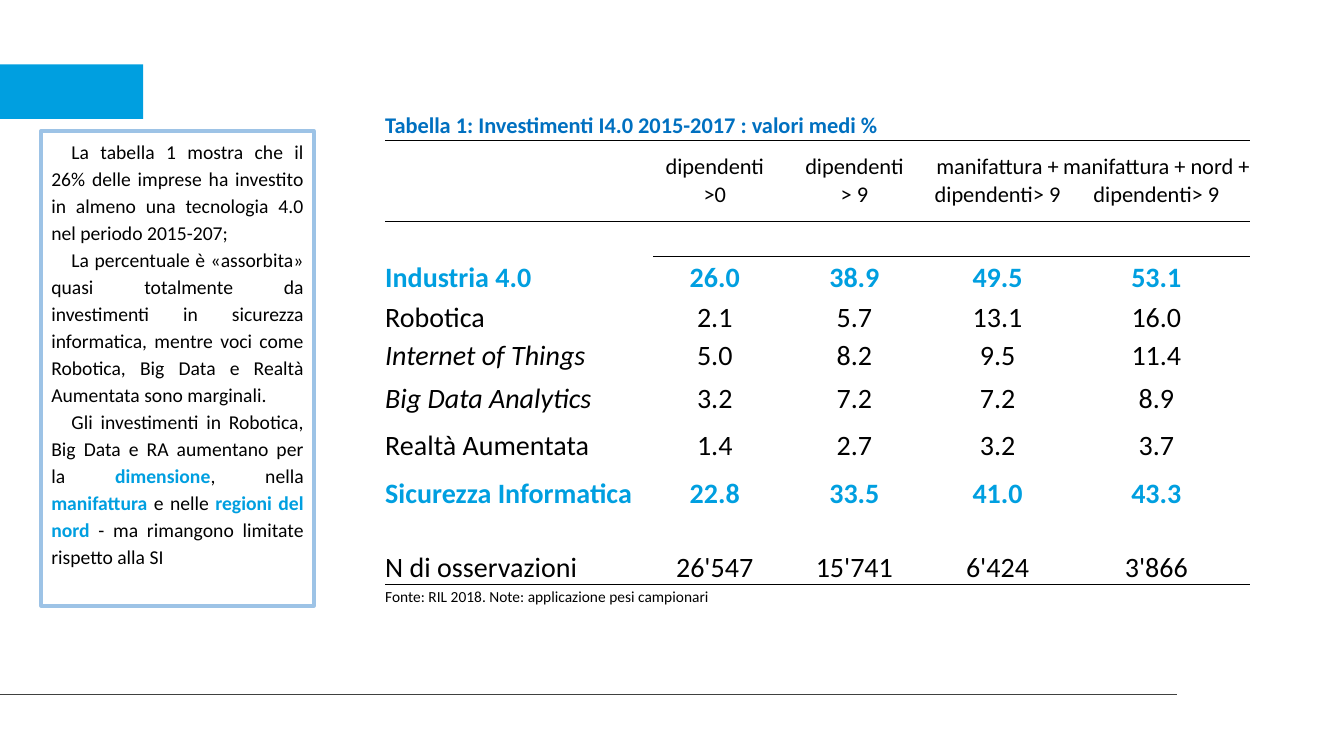
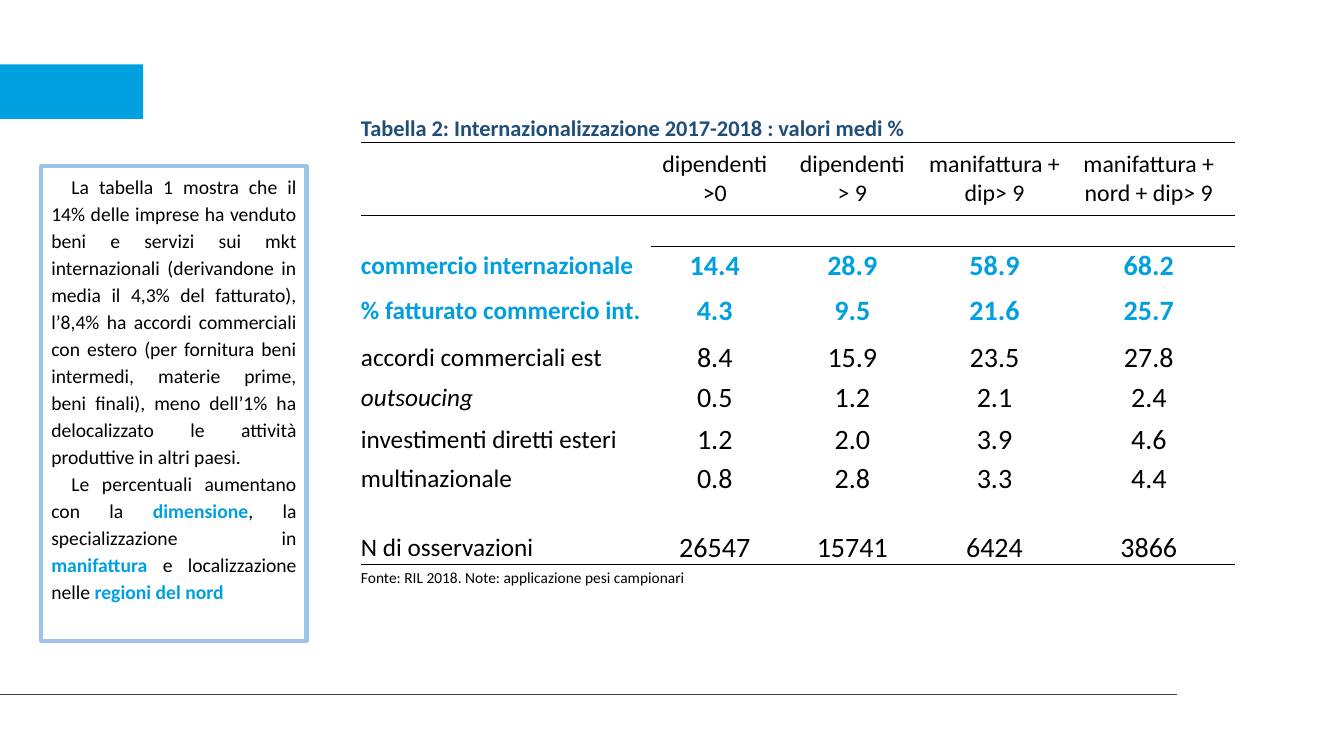
import pptx
import pptx.util
import pptx.dml.color
import pptx.enum.shapes
import pptx.enum.text
import pptx.oxml.ns
from dataclasses import dataclass
from lxml import etree

Align = pptx.enum.text.PP_ALIGN
Anchor = pptx.enum.text.MSO_ANCHOR
qn = pptx.oxml.ns.qn
NO_GRID = "{2D5ABB26-0587-4C30-8999-92F81FD0307C}"


@dataclass(frozen=True)
class Theme:
    font: str = "Calibri"
    accent: str = "009FE0"
    frame: str = "9DC3E6"
    rule: str = "404140"
    ink: str = "000000"
    note: float = 14
    title: float = 16
    value: float = 20
    source: float = 11


THEME = Theme()


def color(code):
    return pptx.dml.color.RGBColor.from_string(code)


def write(para, text, size=THEME.value, tint=THEME.ink, bold=False,
          slant=False, align=Align.LEFT):
    """Add text to a paragraph; parts between asterisks are accented."""
    para.alignment = align
    for i, part in enumerate(text.split("*")):
        if not part:
            continue
        hot = i % 2 == 1
        run = para.add_run()
        run.text = part
        font = run.font
        font.name, font.size = THEME.font, pptx.util.Pt(size)
        font.bold, font.italic = bold or hot, slant
        font.color.rgb = color(THEME.accent if hot else tint)


def edge(cell, *sides):
    """Draw thin lines on the given sides (T before B) of a cell."""
    props = cell._tc.get_or_add_tcPr()
    for side in sides:
        line = etree.SubElement(props, qn(f"a:ln{side}"),
                                w=str(pptx.util.Pt(0.5)))
        fill = etree.SubElement(line, qn("a:solidFill"))
        etree.SubElement(fill, qn("a:srgbClr"), val=THEME.ink)


class Deck:
    """Lengths are percentages of the slide's width and height."""

    def __init__(self):
        self.file = pptx.Presentation()
        self.file.slide_width = pptx.util.Inches(13.33)
        self.file.slide_height = pptx.util.Inches(7.5)

    def wide(self, share):
        return round(self.file.slide_width * share / 100)

    def high(self, share):
        return round(self.file.slide_height * share / 100)

    def page(self):
        self.slide = self.file.slides.add_slide(self.file.slide_layouts[6])
        self.rect(0, 8.53, 10.65, 7.2, fill=THEME.accent)
        self.rule(0, 87.55, 91.87)

    def rect(self, x, y, w, h, fill=None, line=None):
        shape = self.slide.shapes.add_shape(
            pptx.enum.shapes.MSO_SHAPE.RECTANGLE,
            self.wide(x), self.high(y), self.wide(w), self.high(h))
        shape.shadow.inherit = False
        if fill:
            shape.fill.solid()
            shape.fill.fore_color.rgb = color(fill)
        else:
            shape.fill.background()
        if line:
            shape.line.color.rgb = color(line)
            shape.line.width = pptx.util.Pt(3)
        else:
            shape.line.fill.background()
        return shape

    def rule(self, start, end, y):
        line = self.slide.shapes.add_connector(
            pptx.enum.shapes.MSO_CONNECTOR.STRAIGHT,
            self.wide(start), self.high(y), self.wide(end), self.high(y))
        line.line.color.rgb = color(THEME.rule)
        line.line.width = pptx.util.Pt(1)
        etree.SubElement(line._element.spPr, qn("a:effectLst"))

    def note(self, y, w, texts):
        frame = self.rect(3.08, y, w, 62.8, line=THEME.frame).text_frame
        frame.word_wrap = True
        frame.vertical_anchor = Anchor.TOP
        for i, text in enumerate(texts):
            para = frame.add_paragraph() if i else frame.paragraphs[0]
            para.line_spacing = 1.15
            props = para._p.get_or_add_pPr()
            props.set("marL", "0")
            props.set("indent", str(pptx.util.Inches(0.2)))
            write(para, text, size=THEME.note, align=Align.JUSTIFY)

    def cell(self, row, col, text, anchor=Anchor.MIDDLE, **style):
        frame = self.grid.cell(row, col).text_frame
        for i, line in enumerate(text.split("\n")):
            para = frame.add_paragraph() if i else frame.paragraphs[0]
            write(para, line, **style)
        self.grid.cell(row, col).vertical_anchor = anchor

    def table(self, x, y, cols, rows, title, tint, heads, body, total,
              source, head=THEME.title, label=THEME.value):
        shape = self.slide.shapes.add_table(
            len(rows), len(cols), self.wide(x), self.high(y),
            self.wide(sum(cols)), self.high(sum(rows)))
        grid = self.grid = shape.table
        grid.first_row = grid.horz_banding = False
        grid._tbl.tblPr.find(qn("a:tableStyleId")).text = NO_GRID
        for col, share in zip(grid.columns, cols):
            col.width = self.wide(share)
        for row, share in zip(grid.rows, rows):
            row.height = self.high(share)

        # Rules and plain cells
        last = len(rows) - 1
        sides = {0: "B", 1: "TB", 2: "T", last - 1: "B", last: "T"}
        for r in range(len(rows)):
            for c in range(len(cols)):
                cell = grid.cell(r, c)
                cell.margin_left = cell.margin_right = 0
                cell.margin_top = cell.margin_bottom = 0
                lines = sides.get(r, "")
                if c == 0 and r in (1, 2):
                    lines = "T" if r == 1 else ""
                edge(cell, *lines)
                cell.fill.background()
        for r in (0, last):
            grid.cell(r, 0).merge(grid.cell(r, len(cols) - 1))

        # Title, headings and source
        self.cell(0, 0, title, size=THEME.title, tint=tint, bold=True)
        for c, text in enumerate(heads, 1):
            self.cell(1, c, text, size=head, align=Align.CENTER)
        self.cell(last, 0, source, anchor=Anchor.BOTTOM, size=THEME.source)

        # Values, with the total after an empty row
        spots = [*range(3, 3 + len(body)), last - 1]
        for r, (mark, name, *values) in zip(spots, body + [total]):
            hot = mark == "hot"
            style = dict(bold=hot, tint=THEME.accent if hot else THEME.ink)
            self.cell(r, 0, name, size=label, slant=mark == "slant", **style)
            for c, value in enumerate(values, 1):
                self.cell(r, c, value, align=Align.CENTER, **style)


SOURCE = "Fonte: RIL 2018. Note: applicazione pesi campionari"


def main():
    deck = Deck()

    # Investments
    deck.page()
    deck.note(17.33, 20.26, [
        "La tabella 1 mostra che il 26% delle imprese ha investito in almeno "
        "una tecnologia 4.0 nel periodo 2015-207;",
        "La percentuale è «assorbita» quasi totalmente da investimenti in "
        "sicurezza informatica, mentre voci come Robotica, Big Data e Realtà "
        "Aumentata sono marginali.",
        "Gli investimenti in Robotica, Big Data e RA aumentano per la "
        "*dimensione*, nella *manifattura *e nelle *regioni del nord *- ma "
        "rimangono limitate rispetto alla SI"])
    deck.table(
        28.66, 14.8, [19.95, 9.15, 11.63, 9.68, 13.95],
        [3.73, 10.8, 4.53, 5.87, 4.53, 5.6, 5.87, 6.4, 6.4, 4.27, 4.53, 2.93],
        "Tabella 1: Investimenti I4.0 2015-2017 : valori medi %", "0070C0",
        ["dipendenti >0", "dipendenti\n> 9", "manifattura +\ndipendenti> 9",
         "manifattura + nord + dipendenti> 9"],
        [("hot", "Industria 4.0", "26.0", "38.9", "49.5", "53.1"),
         ("", "Robotica", "2.1", "5.7", "13.1", "16.0"),
         ("slant", "Internet of Things", "5.0", "8.2", "9.5", "11.4"),
         ("slant", "Big Data Analytics", "3.2", "7.2", "7.2", "8.9"),
         ("", "Realtà Aumentata", "1.4", "2.7", "3.2", "3.7"),
         ("hot", "Sicurezza Informatica", "22.8", "33.5", "41.0", "43.3")],
        ("", "N di osservazioni", "26'547", "15'741", "6'424", "3'866"),
        SOURCE)

    # International trade
    deck.page()
    deck.note(22, 19.73, [
        "La tabella 1 mostra che il 14% delle imprese ha venduto beni e "
        "servizi sui mkt internazionali (derivandone in media il 4,3% del "
        "fatturato), l’8,4% ha accordi commerciali con estero (per fornitura "
        "beni intermedi, materie prime, beni finali), meno dell’1% ha "
        "delocalizzato le attività produttive in altri paesi.",
        "Le percentuali aumentano con la *dimensione*, la specializzazione "
        "in *manifattura *e localizzazione nelle *regioni del nord*"])
    deck.table(
        26.86, 15.2, [21.6, 9.45, 11.03, 10.13, 12.83],
        [3.6, 9.6, 4.13, 5.2, 6.8, 5.47, 5.2, 5.87, 4.53, 4.53, 4.53, 3.07],
        "Tabella 2: Internazionalizzazione 2017-2018 : valori medi %",
        "1F4E79",
        ["dipendenti >0", "dipendenti\n> 9", "manifattura + dip> 9",
         "manifattura + nord + dip> 9"],
        [("hot", "commercio internazionale", "14.4", "28.9", "58.9", "68.2"),
         ("hot", "% fatturato commercio int.", "4.3", "9.5", "21.6", "25.7"),
         ("", "accordi commerciali est", "8.4", "15.9", "23.5", "27.8"),
         ("slant", "outsoucing", "0.5", "1.2", "2.1", "2.4"),
         ("", "investimenti diretti esteri", "1.2", "2.0", "3.9", "4.6"),
         ("", "multinazionale", "0.8", "2.8", "3.3", "4.4")],
        ("", "N di osservazioni", "26547", "15741", "6424", "3866"),
        SOURCE, head=17, label=18)

    deck.file.save("out.pptx")


if __name__ == "__main__":
    main()
